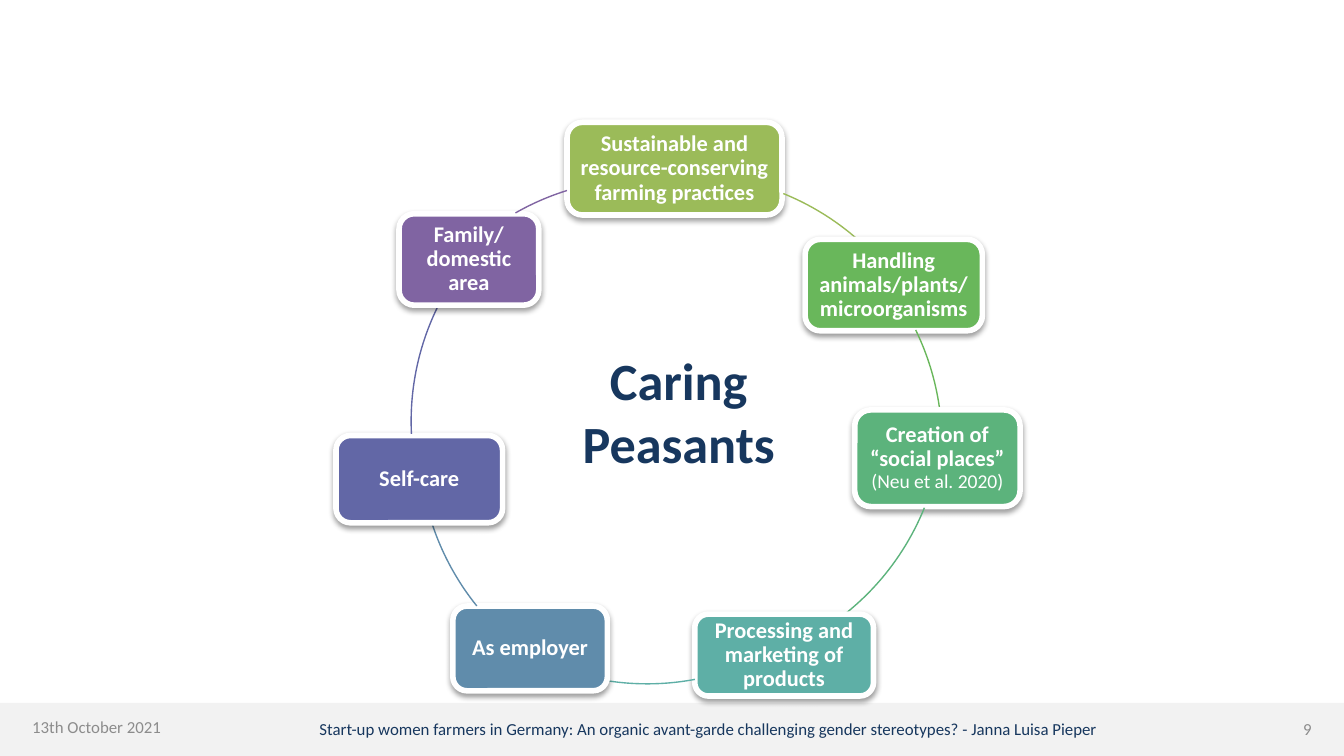
"""Build the slide showing the seven caring fields of peasant farmers as a ring."""
from typing import NamedTuple

from lxml.etree import SubElement
from pptx import Presentation
from pptx.dml.color import RGBColor
from pptx.enum.shapes import MSO_SHAPE as Shape
from pptx.enum.text import MSO_ANCHOR as Anchor, MSO_AUTO_SIZE as AutoSize, PP_ALIGN as Align
from pptx.oxml.ns import qn
from pptx.util import Pt

COLORS = {
    "white": "FFFFFF", "band": "F2F2F2", "gray": "8C8C8C", "navy": "17375E", "shadow": "000000",
    "olive": "9BBB59", "green": "69B75B", "emerald": "5CB37C", "teal": "5EAFA6",
    "blue": "608CAB", "indigo": "6267A6", "purple": "8064A2",
}
FONT = "Calibri"
RING_SIZE = 278.6


class Box(NamedTuple):
    left: float
    top: float
    width: float
    height: float


class Arc(NamedTuple):
    left: float
    top: float
    start: float
    end: float


class Field(NamedTuple):
    text: str
    color: str
    box: Box
    arc: Arc
    citation: str = ""


class Footer(NamedTuple):
    text: str
    color: str
    box: Box
    align: Align


FIELDS = [
    Field("Sustainable and resource-conserving farming practices", "olive",
          Box(303.8, 65.5, 115.2, 49.7), Arc(228.2, 93.6, 292, 311.2)),
    Field("Handling animals/plants/ microorganisms", "green",
          Box(431.3, 128.2, 95, 49), Arc(226.1, 98.6, 334, 352.1)),
    Field("Creation of “social places” ", "emerald",
          Box(457.9, 219.6, 88.6, 51.8), Arc(226.8, 80.6, 22, 51.1), "(Neu et al. 2020)"),
    Field("Processing and marketing of products", "teal",
          Box(372.2, 329, 95.8, 43.9), Arc(207.4, 87.8, 79.4, 98.5)),
    Field("As employer", "blue",
          Box(242.6, 324.7, 82.8, 45.4), Arc(224.6, 97.9, 141.1, 161.8)),
    Field("Self-care", "indigo",
          Box(180, 233.3, 89.3, 46.8), Arc(220.3, 86.4, 177.2, 206.6)),
    Field("Family/ domestic area", "purple",
          Box(213.8, 114.5, 74.9, 49), Arc(205.9, 95.8, 240.3, 252.7)),
]
FOOTERS = [
    Footer("13th October 2021", "gray", Box(17.3, 383.8, 81.4, 11.5), Align.LEFT),
    Footer("Start-up women farmers in Germany: An organic avant-garde challenging gender "
           "stereotypes? - Janna Luisa Pieper", "navy", Box(128.9, 385.2, 500.4, 11.5), Align.CENTER),
    Footer("9", "gray", Box(655.2, 385.2, 47.5, 10.1), Align.RIGHT),
]


def rgb(name: str) -> RGBColor:
    """Return a palette colour."""
    return RGBColor.from_string(COLORS[name])


def place(box: Box) -> list[Pt]:
    """Return a box as lengths."""
    return [Pt(value) for value in box]


def set_frame(frame, anchor: Anchor, across: float, down: float) -> None:
    """Set wrapping, anchor and insets of a text frame."""
    frame.word_wrap = True
    frame.auto_size = AutoSize.NONE
    frame.vertical_anchor = anchor
    frame.margin_left = frame.margin_right = Pt(across)
    frame.margin_top = frame.margin_bottom = Pt(down)


def write(para, text: str, size: float, color: str, align: Align, bold: bool = False) -> None:
    """Fill and format a paragraph."""
    para.add_run().text = text
    para.alignment = align
    font = para.font
    font.name, font.size, font.bold = FONT, Pt(size), bold
    font.color.rgb = rgb(color)


def add_shadow(shape) -> None:
    """Give a shape a soft shadow below it."""
    shape.shadow.inherit = False
    effects = shape._element.spPr.find(qn("a:effectLst"))
    shadow = SubElement(effects, qn("a:outerShdw"), blurRad=str(Pt(3.1)), dist=str(Pt(1.6)),
                        dir="5400000", rotWithShape="0")
    color = SubElement(shadow, qn("a:srgbClr"), val=COLORS["shadow"])
    SubElement(color, qn("a:alpha"), val="38000")


def add_field(page, field: Field) -> None:
    """Draw one labelled box."""
    box = page.shapes.add_shape(Shape.ROUNDED_RECTANGLE, *place(field.box))
    box.fill.solid()
    box.fill.fore_color.rgb = rgb(field.color)
    box.line.color.rgb = rgb("white")
    box.line.width = Pt(3)
    add_shadow(box)
    set_frame(box.text_frame, Anchor.MIDDLE, 3.6, 3.6)
    para = box.text_frame.paragraphs[0]
    write(para, field.text, 12, "white", Align.CENTER, bold=True)
    para.line_spacing = 0.9
    if field.citation:
        span = para.add_run()
        span.text = field.citation
        span.font.size, span.font.bold = Pt(10.5), False


def add_arc(page, arc: Arc, color: str) -> None:
    """Draw the ring segment that leads to the next box."""
    curve = page.shapes.add_shape(Shape.ARC, *place(Box(arc.left, arc.top, RING_SIZE, RING_SIZE)))
    curve.adjustments[0] = arc.start * 0.6
    curve.adjustments[1] = arc.end * 0.6
    curve.fill.background()
    curve.line.color.rgb = rgb(color)
    curve.line.width = Pt(0.75)
    curve.shadow.inherit = False


def add_band(page) -> None:
    """Draw the footer band."""
    band = page.shapes.add_shape(Shape.RECTANGLE, *place(Box(0, 376.6, 720, 28.4)))
    band.fill.solid()
    band.fill.fore_color.rgb = rgb("band")
    band.line.fill.background()
    band.shadow.inherit = False


def add_footer(page, footer: Footer) -> None:
    """Write one footer text."""
    frame = page.shapes.add_textbox(*place(footer.box)).text_frame
    set_frame(frame, Anchor.TOP, 0, 0)
    write(frame.paragraphs[0], footer.text, 9, footer.color, footer.align)


def set_title(page, text: str) -> None:
    """Put the title in the middle of the ring."""
    title = page.shapes.title
    title.left, title.top, title.width, title.height = place(Box(295.9, 184.3, 135.4, 72.7))
    set_frame(title.text_frame, Anchor.TOP, 4.3, 2.2)
    write(title.text_frame.paragraphs[0], text, 28, "navy", Align.CENTER, bold=True)


def main() -> None:
    """Build and save the deck."""
    deck = Presentation()
    deck.slide_width, deck.slide_height = Pt(720), Pt(405)
    page = deck.slides.add_slide(deck.slide_layouts[5])
    add_band(page)
    for field in FIELDS:
        add_field(page, field)
        add_arc(page, field.arc, field.color)
    set_title(page, "Caring Peasants")
    for footer in FOOTERS:
        add_footer(page, footer)
    deck.save("out.pptx")


if __name__ == "__main__":
    main()
